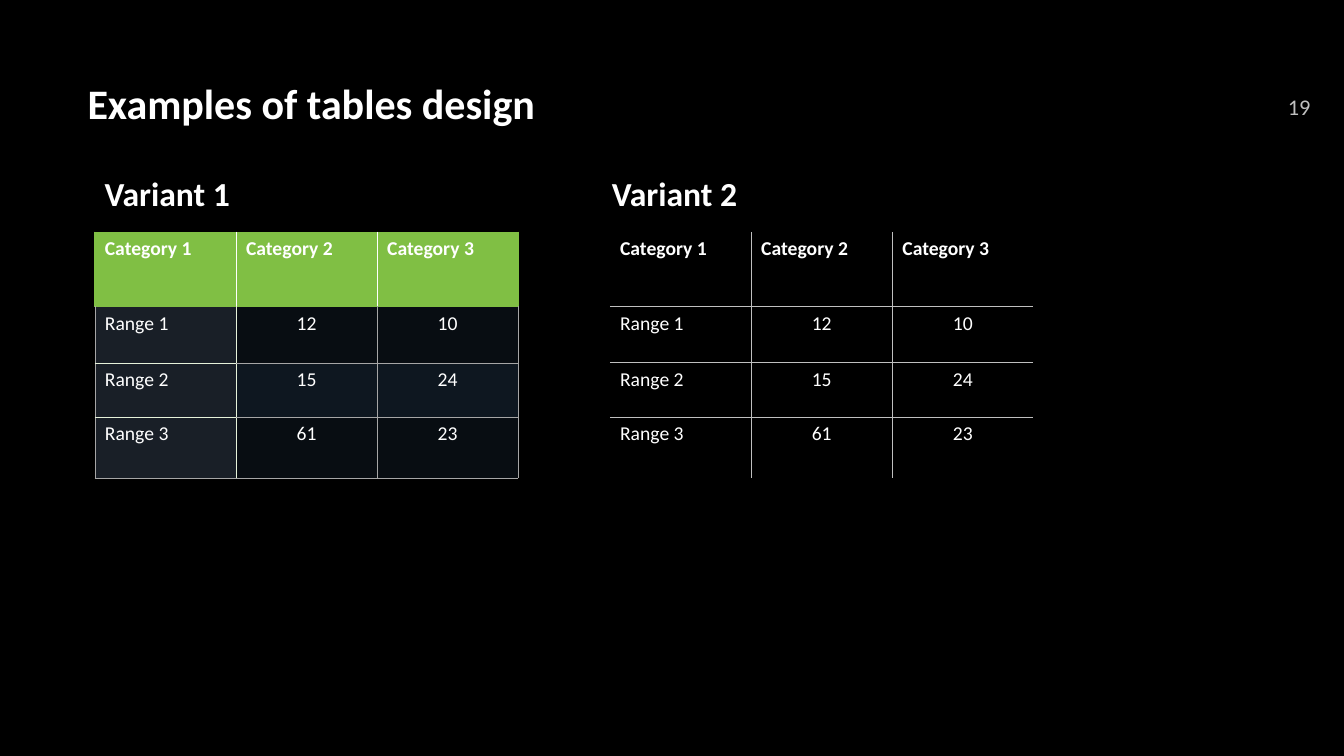
from dataclasses import dataclass

from lxml.etree import SubElement
from pptx import Presentation
from pptx.dml.color import RGBColor
from pptx.enum.shapes import MSO_SHAPE
from pptx.enum.text import MSO_ANCHOR, PP_ALIGN
from pptx.oxml.ns import qn
from pptx.util import Inches, Pt


@dataclass(frozen=True)
class Theme:
    """Colours, font and type sizes of the slide."""
    font: str = "Calibri"
    background: str = "000000"
    text: str = "FFFFFF"
    number: str = "BFBFBF"
    header: str = "80BF44"
    label: str = "191F27"
    bands: tuple = ("080D12", "0E1720")
    pale: str = "E6F2DA"
    grid: str = "A6A6A6"
    rule: str = "BFBFBF"
    title_size: int = 30
    heading_size: int = 24
    number_size: int = 16
    cell_size: int = 14


THEME = Theme()
HAIRLINE, HEADER_LINE, RULE_LINE = 0.23, 0.5, 0.96
ROW_HEIGHTS = (0.74, 0.56, 0.54, 0.6)
TABLE_SIZE = (4.2, sum(ROW_HEIGHTS))
ROWS = (
    ("Category 1", "Category 2", "Category 3"),
    ("Range 1", "12", "10"),
    ("Range 2", "15", "24"),
    ("Range 3", "61", "23"),
)
LAST_ROW, LAST_COLUMN = len(ROWS), len(ROWS[0])


def style_paragraph(paragraph, size, color=THEME.text, bold=False, align=PP_ALIGN.LEFT):
    """Set the font and alignment of one paragraph."""
    paragraph.alignment = align
    font = paragraph.font
    font.name, font.size, font.bold = THEME.font, Pt(size), bold
    font.color.rgb = RGBColor.from_string(color)


def add_text(slide, box, text, size, anchor=MSO_ANCHOR.MIDDLE, **style):
    """Place a one-line text box and return its paragraph."""
    frame = slide.shapes.add_textbox(*map(Inches, box)).text_frame
    frame.word_wrap = True
    frame.vertical_anchor = anchor
    paragraph = frame.paragraphs[0]
    paragraph.text = text
    style_paragraph(paragraph, size, **style)
    return paragraph


def filled_vertical(row, edge):
    """Return colour and width of a vertical edge in the filled table."""
    if row == 0:
        outer = edge in (0, LAST_COLUMN)
        return (THEME.header, HEADER_LINE) if outer else (THEME.text, HAIRLINE)
    return (THEME.pale if edge == 1 else THEME.grid), HAIRLINE


def filled_horizontal(edge, column):
    """Return colour and width of a horizontal edge in the filled table."""
    if edge < 2:
        return THEME.header, HEADER_LINE
    return (THEME.pale if column == 0 and edge < LAST_ROW else THEME.grid), HAIRLINE


def filled_color(row, column):
    """Return the fill of a cell in the filled table."""
    if row == 0:
        return THEME.header
    return THEME.label if column == 0 else THEME.bands[(row - 1) % 2]


def ruled_vertical(row, edge):
    """Return an inner vertical rule, or None on the outside."""
    return (THEME.rule, RULE_LINE) if 0 < edge < LAST_COLUMN else None


def ruled_horizontal(edge, column):
    """Return an inner horizontal rule, or None on the outside."""
    return (THEME.rule, RULE_LINE) if 0 < edge < LAST_ROW else None


def ruled_color(row, column):
    """Return no fill for every cell of the ruled table."""
    return None


FILLED = (filled_vertical, filled_horizontal, filled_color)
RULED = (ruled_vertical, ruled_horizontal, ruled_color)


def set_border(cell, side, border):
    """Draw one side of a cell, or clear it when border is None."""
    properties = cell._tc.get_or_add_tcPr()
    line = SubElement(properties, qn(f"a:ln{side}"))
    if border is None:
        SubElement(line, qn("a:noFill"))
        return
    color, width = border
    line.set("w", str(int(Pt(width))))
    SubElement(SubElement(line, qn("a:solidFill")), qn("a:srgbClr")).set("val", color)


def set_fill(target, color):
    """Fill a cell or shape, or leave it transparent when color is None."""
    if color is None:
        target.fill.background()
    else:
        target.fill.solid()
        target.fill.fore_color.rgb = RGBColor.from_string(color)


def add_table(slide, left, top, design):
    """Place the data table at a corner in the given design."""
    vertical, horizontal, fill_color = design
    box = map(Inches, (left, top, *TABLE_SIZE))
    table = slide.shapes.add_table(LAST_ROW, LAST_COLUMN, *box).table
    table.first_row = table.horz_banding = False
    for table_row, height in zip(table.rows, ROW_HEIGHTS):
        table_row.height = Inches(height)
    for row, texts in enumerate(ROWS):
        for column, text in enumerate(texts):
            cell = table.cell(row, column)
            cell.text = text
            align = PP_ALIGN.CENTER if row and column else PP_ALIGN.LEFT
            style_paragraph(cell.text_frame.paragraphs[0], THEME.cell_size,
                            bold=row == 0, align=align)
            set_border(cell, "L", vertical(row, column))
            set_border(cell, "R", vertical(row, column + 1))
            set_border(cell, "T", horizontal(row, column))
            set_border(cell, "B", horizontal(row + 1, column))
            set_fill(cell, fill_color(row, column))


def add_variant(slide, heading_left, table_left, heading, design):
    """Place a heading with its table below."""
    add_text(slide, (heading_left, 1.67, 2, 0.5), heading, THEME.heading_size,
             anchor=MSO_ANCHOR.TOP, bold=True)
    add_table(slide, table_left, 2.3, design)


def add_backdrop(slide, width, height):
    """Cover the whole slide with a plain panel."""
    panel = slide.shapes.add_shape(MSO_SHAPE.RECTANGLE, 0, 0, width, height)
    panel.shadow.inherit = False
    panel.line.fill.background()
    set_fill(panel, THEME.background)


def add_header(slide):
    """Place the title and the slide number."""
    title = add_text(slide, (0.57, 0.62, 11.7, 0.86), "Examples of tables design",
                     THEME.title_size, bold=True)
    title.line_spacing = 0.9
    title._p.get_or_add_pPr().set("marL", str(int(Inches(0.2))))
    add_text(slide, (12.44, 0.86, 0.89, 0.4), "19", THEME.number_size,
             color=THEME.number, align=PP_ALIGN.CENTER)


def main():
    """Build and save the slide."""
    presentation = Presentation()
    presentation.slide_width, presentation.slide_height = Inches(13.33), Inches(7.5)
    slide = presentation.slides.add_slide(presentation.slide_layouts[6])
    add_backdrop(slide, presentation.slide_width, presentation.slide_height)
    add_header(slide)
    add_variant(slide, 0.94, 0.94, "Variant 1", FILLED)
    add_variant(slide, 5.97, 6.05, "Variant 2", RULED)
    presentation.save("out.pptx")


if __name__ == "__main__":
    main()
